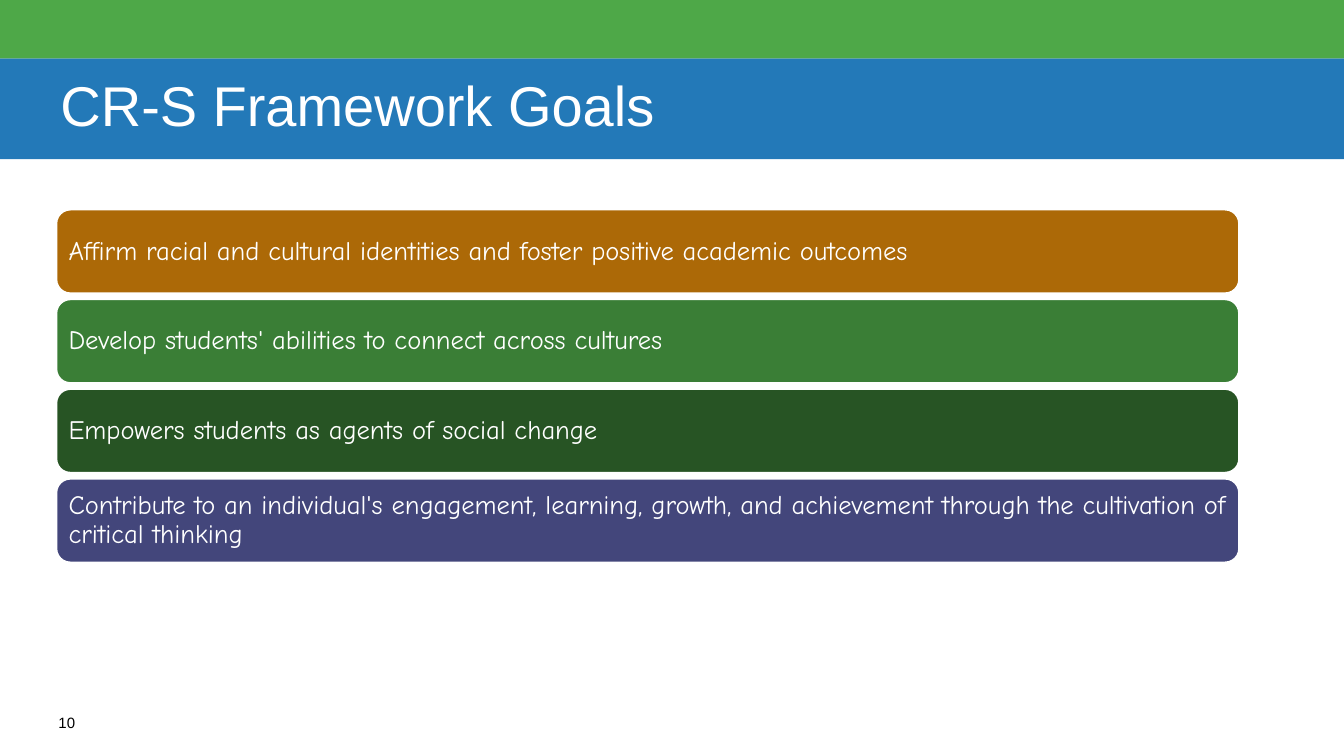
from pptx import Presentation
from pptx.dml.color import RGBColor
from pptx.enum.shapes import MSO_SHAPE
from pptx.enum.text import MSO_ANCHOR, MSO_AUTO_SIZE, PP_ALIGN
from pptx.util import Inches, Pt

WHITE = RGBColor(0xFF, 0xFF, 0xFF)
BLACK = RGBColor(0x00, 0x00, 0x00)
BAND_GREEN = RGBColor(0x4E, 0xA8, 0x48)
TITLE_BLUE = RGBColor(0x23, 0x79, 0xB8)
AMBER = RGBColor(0xAC, 0x69, 0x07)
GREEN = RGBColor(0x3A, 0x7E, 0x36)
DARK_GREEN = RGBColor(0x27, 0x54, 0x24)
INDIGO = RGBColor(0x43, 0x46, 0x7B)

TITLE = "CR-S Framework Goals"
PAGE_NUMBER = "10"
GOALS = [
    ("Affirm racial and cultural identities and foster positive academic outcomes", AMBER),
    ("Develop students' abilities to connect across cultures", GREEN),
    ("Empowers students as agents of social change", DARK_GREEN),
    ("Contribute to an individual's engagement, learning, growth, and achievement "
     "through the cultivation of critical thinking", INDIGO),
]

SLIDE_WIDTH = 13.33
BAND_HEIGHT = 0.58
GOAL_LEFT, GOAL_TOP = 0.56, 2.08
GOAL_WIDTH, GOAL_HEIGHT = 11.73, 0.83
GOAL_PITCH = 0.89


def write_text(shape, text, size, font="Arial", color=WHITE, inset=(0, 0),
               anchor=MSO_ANCHOR.MIDDLE, line_spacing=0.9):
    frame = shape.text_frame
    frame.word_wrap = True
    frame.auto_size = MSO_AUTO_SIZE.NONE
    frame.vertical_anchor = anchor
    frame.margin_left = frame.margin_right = Inches(inset[0])
    frame.margin_top = frame.margin_bottom = Inches(inset[1])
    paragraph = frame.paragraphs[0]
    paragraph.alignment = PP_ALIGN.LEFT
    paragraph.line_spacing = line_spacing
    run = paragraph.add_run()
    run.text = text
    run.font.size = Pt(size)
    run.font.name = font
    run.font.color.rgb = color


def add_block(slide, kind, left, top, width, height, fill):
    shape = slide.shapes.add_shape(
        kind, Inches(left), Inches(top), Inches(width), Inches(height))
    shape.shadow.inherit = False
    shape.fill.solid()
    shape.fill.fore_color.rgb = fill
    shape.line.fill.background()
    return shape


def main():
    presentation = Presentation()
    presentation.slide_width = Inches(SLIDE_WIDTH)
    presentation.slide_height = Inches(7.5)
    slide = presentation.slides.add_slide(presentation.slide_layouts[5])

    add_block(slide, MSO_SHAPE.RECTANGLE, 0, 0, SLIDE_WIDTH, BAND_HEIGHT, BAND_GREEN)

    title = slide.shapes.title
    title.left, title.top = Inches(0), Inches(BAND_HEIGHT)
    title.width, title.height = Inches(SLIDE_WIDTH), Inches(1)
    title.fill.solid()
    title.fill.fore_color.rgb = TITLE_BLUE
    write_text(title, TITLE, 40, inset=(0.6, 0.05))

    for index, (goal, color) in enumerate(GOALS):
        bar = add_block(slide, MSO_SHAPE.ROUNDED_RECTANGLE, GOAL_LEFT,
                        GOAL_TOP + index * GOAL_PITCH, GOAL_WIDTH, GOAL_HEIGHT, color)
        bar.line.color.rgb = WHITE
        bar.line.width = Pt(1.25)
        write_text(bar, goal, 19, font="Comic Neue", inset=(0.08, 0.08))

    page_number = slide.shapes.add_textbox(
        Inches(0.58), Inches(7.08), Inches(0.42), Inches(0.25))
    write_text(page_number, PAGE_NUMBER, 10.7, color=BLACK,
               anchor=MSO_ANCHOR.TOP, line_spacing=1.0)

    presentation.save("out.pptx")


if __name__ == "__main__":
    main()
